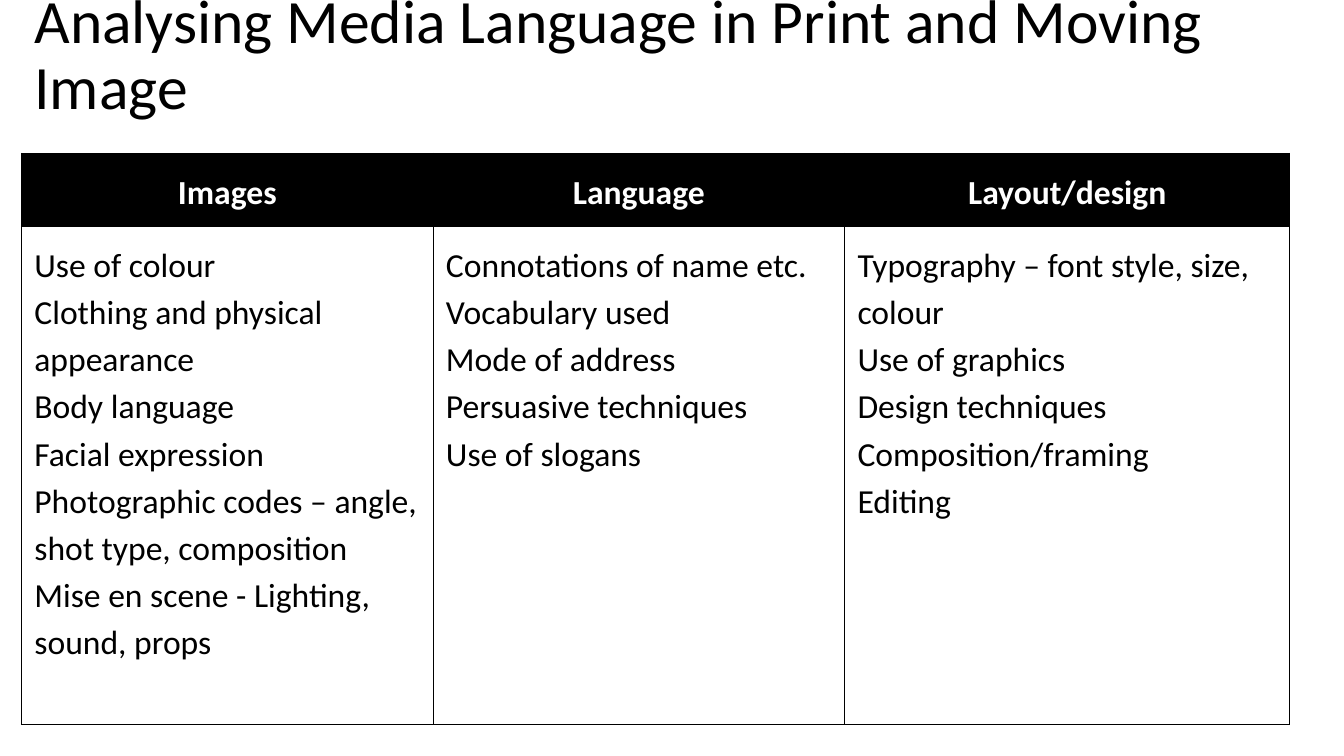
from lxml.etree import SubElement
from pptx import Presentation
from pptx.dml.color import RGBColor
from pptx.enum.text import MSO_ANCHOR, MSO_AUTO_SIZE, PP_ALIGN
from pptx.oxml.ns import qn
from pptx.util import Pt

BLACK = RGBColor(0x00, 0x00, 0x00)
WHITE = RGBColor(0xFF, 0xFF, 0xFF)

COLUMNS = {
    "Images": [
        "Use of colour",
        "Clothing and physical appearance",
        "Body language",
        "Facial expression",
        "Photographic codes – angle, shot type, composition",
        "Mise en scene - Lighting, sound, props",
    ],
    "Language": [
        "Connotations of name etc.",
        "Vocabulary used",
        "Mode of address",
        "Persuasive techniques",
        "Use of slogans",
    ],
    "Layout/design": [
        "Typography – font style, size, colour",
        "Use of graphics",
        "Design techniques",
        "Composition/framing",
        "Editing",
    ],
}


class SlideBuilder:
    """Holds the slide and its style, and adds the title and table."""

    font = "Calibri"
    margin = Pt(9.2)
    border = Pt(0.75)

    def __init__(self, prs):
        self.s = prs.slides.add_slide(prs.slide_layouts[5])

    def set_margins(self, box):
        box.margin_left = box.margin_right = self.margin
        box.margin_top = box.margin_bottom = self.margin

    def format(self, p, size, color, spacing, align=PP_ALIGN.LEFT, bold=False):
        p.alignment = align
        p.line_spacing = spacing
        p.space_before = p.space_after = Pt(0)
        p.font.name = self.font
        p.font.size = Pt(size)
        p.font.bold = bold
        p.font.color.rgb = color

    def title(self, text, x, y, w, h):
        sp = self.s.shapes.title
        sp.left, sp.top, sp.width, sp.height = Pt(x), Pt(y), Pt(w), Pt(h)
        tf = sp.text_frame
        tf.text = text
        tf.word_wrap = True
        tf.auto_size = MSO_AUTO_SIZE.NONE
        tf.vertical_anchor = MSO_ANCHOR.BOTTOM
        self.set_margins(tf)
        self.format(tf.paragraphs[0], 44, BLACK, 0.9)

    def outline(self, cell):
        tcPr = cell._tc.get_or_add_tcPr()
        for i, side in enumerate(("lnL", "lnR", "lnT", "lnB")):
            ln = tcPr.makeelement(qn(f"a:{side}"), {"w": str(self.border)})
            fill = SubElement(ln, qn("a:solidFill"))
            SubElement(fill, qn("a:srgbClr"), val=str(BLACK))
            tcPr.insert(i, ln)

    def cell(self, cell, lines, header):
        cell.text = "\n".join(lines)
        cell.vertical_anchor = MSO_ANCHOR.TOP
        self.set_margins(cell)
        cell.fill.solid()
        cell.fill.fore_color.rgb = BLACK if header else WHITE
        color = WHITE if header else BLACK
        align = PP_ALIGN.CENTER if header else PP_ALIGN.LEFT
        for p in cell.text_frame.paragraphs:
            self.format(p, 24, color, 1.15, align, header)
        self.outline(cell)

    def table(self, columns, x, y, widths, heights):
        table = self.s.shapes.add_table(
            len(heights), len(widths), Pt(x), Pt(y),
            Pt(sum(widths)), Pt(sum(heights))).table
        table.horz_banding = False
        for row, height in zip(table.rows, heights):
            row.height = Pt(height)
        for i, (heading, items) in enumerate(columns.items()):
            table.columns[i].width = Pt(widths[i])
            self.cell(table.cell(0, i), [heading], True)
            self.cell(table.cell(1, i), items, False)


def main():
    prs = Presentation()
    prs.slide_width, prs.slide_height = Pt(960), Pt(540)
    slide = SlideBuilder(prs)
    slide.title("Analysing Media Language in Print and Moving Image",
                15.4, 20, 894, 77)
    slide.table(COLUMNS, 15.4, 109.5, [294, 294, 318], [52.5, 355.5])
    prs.save("out.pptx")


if __name__ == "__main__":
    main()
